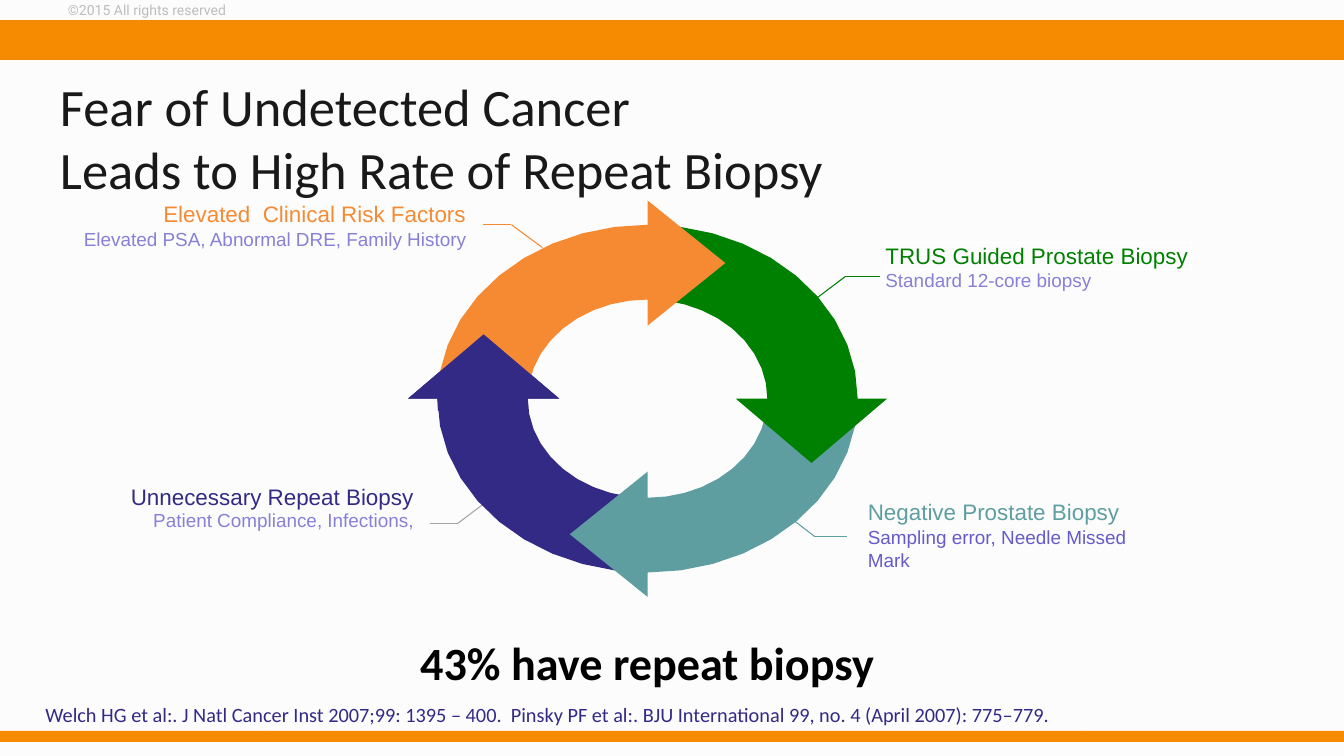
import math

from lxml import etree
from pptx import Presentation
from pptx import util as u
from pptx.dml.color import RGBColor
from pptx.enum import shapes, text
from pptx.oxml.ns import qn

BAR_ORANGE, ORANGE, GREEN, TEAL, PURPLE = "F68A00", "F68A33", "008000", "5F9EA0", "332A86"
GREY, LILAC, VIOLET = "A4A4A4", "8880D7", "655ACB"
LEFT, RIGHT, CENTER = text.PP_ALIGN.LEFT, text.PP_ALIGN.RIGHT, text.PP_ALIGN.CENTER

# The cycle is a unit circle stretched to an ellipse; radii below are fractions of it.
CENTER_X, CENTER_Y = 12.85, 7.91
RADIUS_X, RADIUS_Y = 4.17, 3.45
INNER = 0.57
HEAD_INNER, HEAD_MIDDLE, HEAD_OUTER = 0.42, 0.78, 1.14
HEAD_LENGTH = 0.37


def rgb(color):
    return RGBColor.from_string(color)


def place(shape, left, top, width, height):
    shape.left, shape.top = u.Inches(left), u.Inches(top)
    shape.width, shape.height = u.Inches(width), u.Inches(height)


def format_text(shape, words, size, color, font="Arial", align=LEFT, bold=False,
                insets=(0, 0), wrap=True, grow=True):
    frame = shape.text_frame
    frame.text = words
    frame.word_wrap = wrap
    sizes = text.MSO_AUTO_SIZE
    frame.auto_size = sizes.SHAPE_TO_FIT_TEXT if grow else sizes.NONE
    frame.margin_left = frame.margin_right = u.Inches(insets[0])
    frame.margin_top = frame.margin_bottom = u.Inches(insets[1])
    paragraph = frame.paragraphs[0]
    paragraph.alignment = align
    paragraph.font.name = font
    paragraph.font.size = u.Pt(size)
    paragraph.font.bold = bold
    paragraph.font.color.rgb = rgb(color)


def add_text(slide, box, words, size, color, **options):
    shape = slide.shapes.add_textbox(*(u.Inches(length) for length in box))
    format_text(shape, words, size, color, **options)
    return shape


def add_bar(slide, top, height, segments=5, width=5.37):
    for index in range(segments):
        bar = slide.shapes.add_shape(
            shapes.MSO_SHAPE.RECTANGLE, u.Inches(-0.03 + index * width), u.Inches(top),
            u.Inches(width), u.Inches(height))
        bar.shadow.inherit = False
        bar.fill.solid()
        bar.fill.fore_color.rgb = rgb(BAR_ORANGE)
        bar.line.color.rgb = rgb(BAR_ORANGE)
        bar.line.width = u.Pt(0.75)


def add_leader(slide, color, *points):
    """Draw a thin line through the points, one connector per segment."""
    for start, end in zip(points, points[1:]):
        line = slide.shapes.add_connector(
            shapes.MSO_CONNECTOR.STRAIGHT, *(u.Inches(value) for value in start + end))
        line.line.color.rgb = rgb(color)
        line.line.width = u.Pt(1.5)
        etree.SubElement(line._element.spPr, qn("a:effectLst"))


def ring_point(degrees, radius, ahead=0):
    """Return a point on the ring in EMU, moved ahead along the clockwise tangent."""
    angle = math.radians(degrees)
    x = radius * math.cos(angle) - ahead * math.sin(angle)
    y = radius * math.sin(angle) + ahead * math.cos(angle)
    return u.Inches(CENTER_X + RADIUS_X * x), u.Inches(CENTER_Y + RADIUS_Y * y)


def add_ring_arrow(slide, color, end, sweep=90):
    """Draw a clockwise arrow whose band covers sweep degrees up to the end angle."""
    steps = math.ceil(sweep / 9)
    angles = [end - sweep + sweep * step / steps for step in range(steps + 1)]
    points = [ring_point(angle, 1) for angle in angles]
    points += [ring_point(end, HEAD_OUTER), ring_point(end, HEAD_MIDDLE, HEAD_LENGTH),
               ring_point(end, HEAD_INNER)]
    points += [ring_point(angle, INNER) for angle in reversed(angles)]
    builder = slide.shapes.build_freeform(*points[0])
    builder.add_line_segments(points[1:], close=True)
    arrow = builder.convert_to_shape()
    arrow.shadow.inherit = False
    arrow.fill.solid()
    arrow.fill.fore_color.rgb = rgb(color)
    arrow.line.fill.background()


def add_label(slide, heading, heading_box, color, detail, detail_box, detail_color=LILAC,
              align=LEFT):
    add_text(slide, detail_box, detail, 27, detail_color, align=align)
    return add_text(slide, heading_box, heading, 32, color, align=align, wrap=False)


def add_cycle(slide):
    add_leader(slide, ORANGE, (10.76, 4.91), (10.15, 4.46), (9.58, 4.46))
    add_leader(slide, GREEN, (16.16, 5.95), (16.77, 5.49), (17.47, 5.49))
    add_leader(slide, GREY, (9.7, 9.92), (9.09, 10.38), (8.54, 10.38))
    add_leader(slide, TEAL, (15.55, 10.17), (16.16, 10.64), (16.8, 10.64))

    for color, end in ((PURPLE, 180), (TEAL, 90), (GREEN, 0), (ORANGE, 270)):
        add_ring_arrow(slide, color, end)

    add_label(slide, "Negative Prostate Biopsy", (17.22, 9.88, 5.05, 0.54), TEAL,
              "Sampling error, Needle Missed Mark", (17.22, 10.43, 5.78, 0.91), VIOLET)
    heading = add_label(slide, "TRUS Guided Prostate Biopsy", (17.57, 4.8, 6.07, 0.54), GREEN,
                        "Standard 12-core biopsy", (17.57, 5.33, 5.7, 0.45))
    heading.line.color.rgb = rgb("FFFFFF")
    heading.line.width = u.Pt(0.75)
    add_label(slide, "Elevated  Clinical Risk Factors", (3.19, 3.98, 6.06, 0.54), ORANGE,
              "Elevated PSA, Abnormal DRE, Family History", (1.63, 4.51, 7.62, 0.45),
              align=RIGHT)
    add_label(slide, "Unnecessary Repeat Biopsy", (2.53, 9.58, 5.68, 0.54), PURPLE,
              "Patient Compliance, Infections,", (2.55, 10.1, 5.66, 0.45), align=RIGHT)
    # The purple head lies over the orange tail, which closes the cycle.
    add_ring_arrow(slide, PURPLE, 180, sweep=4)


def main():
    presentation = Presentation()
    presentation.slide_width, presentation.slide_height = u.Inches(26.67), u.Inches(15)
    slide = presentation.slides.add_slide(presentation.slide_layouts[5])
    slide.background.fill.solid()
    slide.background.fill.fore_color.rgb = rgb("FCFCFC")

    add_bar(slide, 14.5, 0.2)
    add_text(slide, (1.25, -0.01, 9.42, 0.44), "©2015 All rights reserved", 20, "BDBDBD",
             font="Roboto", insets=(0.1, 0.05))
    add_bar(slide, 0.4, 0.78)

    title = slide.shapes.title
    place(title, 0.95, 1.47, 24, 2.5)
    format_text(title, "Fear of Undetected Cancer \vLeads to High Rate of Repeat Biopsy", 75,
                "191919", font="Calibri", insets=(0.24, 0.12), grow=False)
    title.text_frame.vertical_anchor = text.MSO_ANCHOR.MIDDLE

    add_cycle(slide)

    add_text(slide, (0.78, 12.54, 24.13, 1.08), "43% have repeat biopsy", 66, "000000",
             font="Calibri", align=CENTER, bold=True, insets=(0.1, 0.05), grow=False)
    add_text(slide, (0.63, 13.81, 26.58, 0.76),
             "Welch HG et al:. J Natl Cancer Inst 2007;99: 1395 – 400.  Pinsky PF et al:. "
             "BJU International 99, no. 4 (April 2007): 775–779.",
             29, PURPLE, font="Calibri", insets=(0.27, 0.13))
    presentation.save("out.pptx")


if __name__ == "__main__":
    main()
